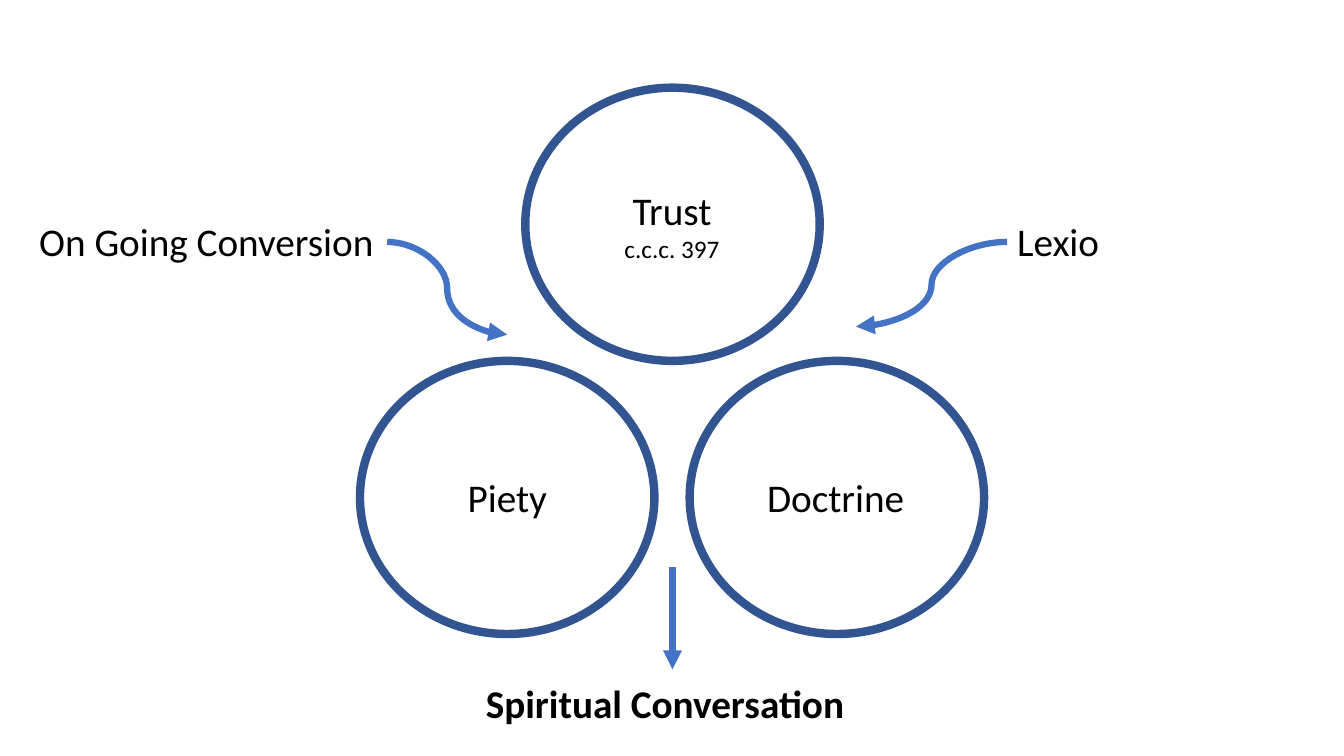
from lxml.etree import SubElement
from pptx import Presentation
from pptx.dml.color import RGBColor
from pptx.enum.shapes import MSO_CONNECTOR, MSO_SHAPE
from pptx.enum.text import MSO_AUTO_SIZE, PP_ALIGN
from pptx.oxml.ns import qn
from pptx.util import Inches, Pt

FONT = "Calibri"
BLACK = "000000"
WHITE = "FFFFFF"
RING = "325491"
ARROW = "4472C4"
RING_W, RING_H = 2.92, 2.71


def color(value):
    return RGBColor.from_string(value)


def add_ring(s, left, top):
    sp = s.shapes.add_shape(MSO_SHAPE.OVAL, Inches(left), Inches(top),
                            Inches(RING_W), Inches(RING_H))
    sp.shadow.inherit = False
    sp.fill.solid()
    sp.fill.fore_color.rgb = color(WHITE)
    sp.line.color.rgb = color(RING)
    sp.line.width = Pt(6)


def add_arrow(s, start, end, kind=MSO_CONNECTOR.CURVE):
    points = [Inches(v) for v in (*start, *end)]
    sp = s.shapes.add_connector(kind, *points)
    sp.line.color.rgb = color(ARROW)
    sp.line.width = Pt(4.5)
    spPr = sp._element.spPr
    SubElement(spPr.find(qn("a:ln")), qn("a:tailEnd"), type="triangle")
    SubElement(spPr, qn("a:effectLst"))


def add_run(p, text, size=28, bold=False, rgb=BLACK):
    r = p.add_run()
    r.text = text
    r.font.name = FONT
    r.font.size = Pt(size)
    r.font.bold = bold
    r.font.color.rgb = color(rgb)


def add_label(s, text, left, top, width, height=0.57, note=None, bold=False):
    sp = s.shapes.add_textbox(Inches(left), Inches(top), Inches(width), Inches(height))
    tf = sp.text_frame
    tf.word_wrap = False
    tf.auto_size = MSO_AUTO_SIZE.SHAPE_TO_FIT_TEXT
    p = tf.paragraphs[0]
    add_run(p, text, bold=bold)
    if note:
        p.alignment = PP_ALIGN.CENTER
        p = tf.add_paragraph()
        p.alignment = PP_ALIGN.CENTER
        add_run(p, note, size=18)


def main():
    prs = Presentation()
    prs.slide_width = Inches(13.33)
    prs.slide_height = Inches(7.5)
    s = prs.slides.add_slide(prs.slide_layouts[6])

    for left, top in ((3.57, 3.58), (6.84, 3.58), (5.21, 0.87)):
        add_ring(s, left, top)

    add_arrow(s, (9.99, 2.4), (8.49, 3.24))
    add_arrow(s, (3.84, 2.4), (5.03, 3.32))
    add_arrow(s, (6.67, 5.63), (6.67, 6.64), MSO_CONNECTOR.STRAIGHT)

    add_label(s, "Lexio", 9.99, 2.11, 1.02)
    add_label(s, "On Going Conversion", 0.29, 2.11, 3.55)
    add_label(s, "Spiritual Conversation", 4.72, 6.69, 3.89, bold=True)
    add_label(s, "Trust", 6.09, 1.8, 1.15, 0.88, note="c.c.c. 397")
    add_label(s, "Piety", 4.54, 4.65, 1)
    add_label(s, "Doctrine", 7.51, 4.65, 1.58)

    prs.save("out.pptx")


if __name__ == "__main__":
    main()
